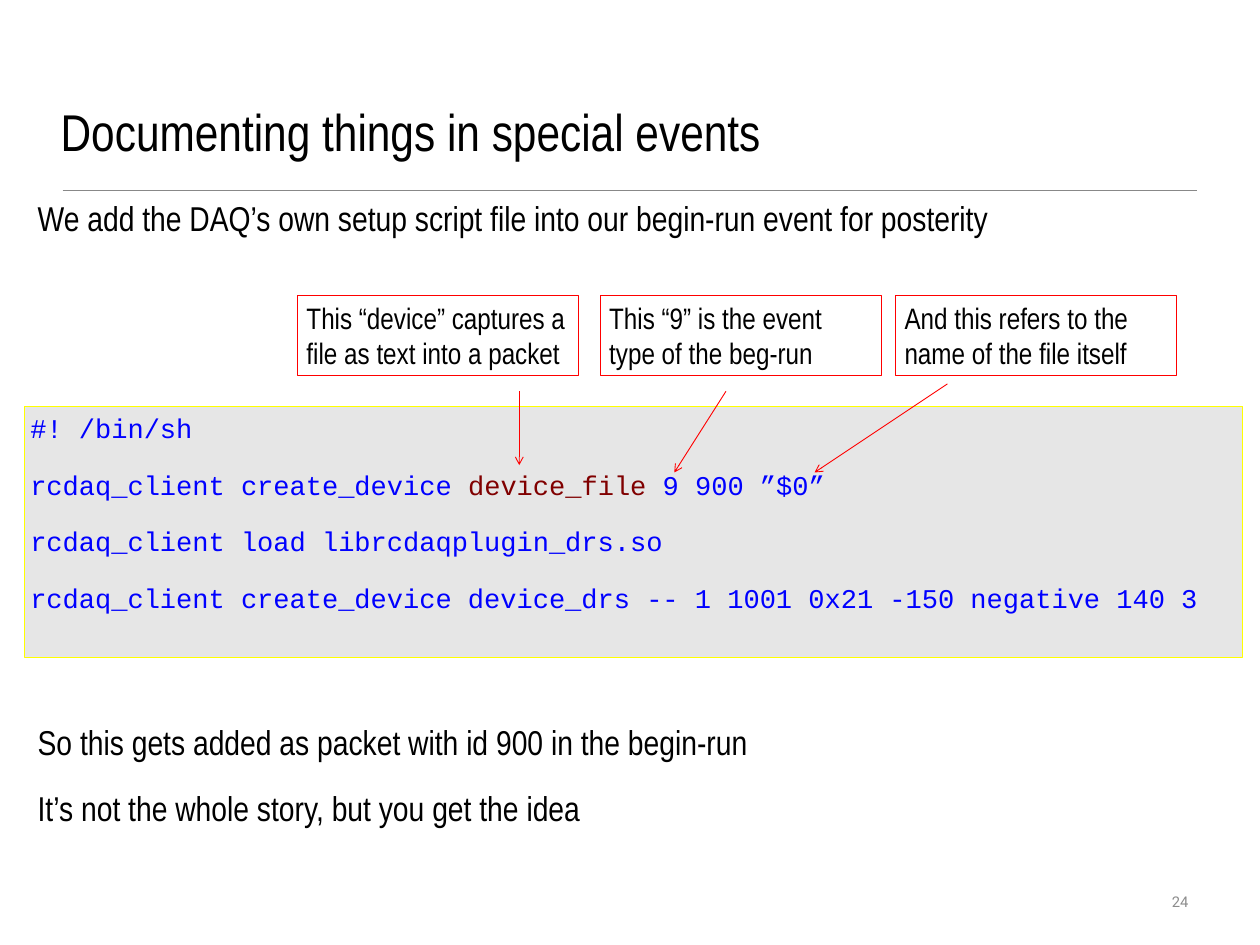
from dataclasses import dataclass

from lxml import etree
from pptx import Presentation
from pptx.dml.color import RGBColor
from pptx.enum.shapes import MSO_CONNECTOR, MSO_SHAPE
from pptx.enum.text import MSO_ANCHOR, MSO_AUTO_SIZE, PP_ALIGN
from pptx.oxml.ns import qn
from pptx.util import Pt

STRAIGHT = MSO_CONNECTOR.STRAIGHT
RECTANGLE = MSO_SHAPE.RECTANGLE
TOP, MIDDLE, BOTTOM = MSO_ANCHOR.TOP, MSO_ANCHOR.MIDDLE, MSO_ANCHOR.BOTTOM
LEFT, RIGHT = PP_ALIGN.LEFT, PP_ALIGN.RIGHT
FIT_SHAPE, NO_FIT = MSO_AUTO_SIZE.SHAPE_TO_FIT_TEXT, MSO_AUTO_SIZE.NONE


@dataclass(frozen=True)
class Theme:
    ink: str = "000000"
    code: str = "0000FF"
    device: str = "800000"
    code_fill: str = "E6E6E6"
    code_border: str = "FFFF00"
    callout: str = "FF0000"
    rule: str = "888888"
    number: str = "8C8C8C"
    body_font: str = "Arial Narrow"
    code_font: str = "Courier New"
    number_font: str = "Roboto"
    title_size: float = 42
    body_size: float = 28
    callout_size: float = 24
    code_size: float = 22
    number_size: float = 12


THEME = Theme()
TIGHT = (4.3, 4.3)
LOOSE = (7.2, 3.6)

CODE_LINES = [
    "#! /bin/sh",
    ["rcdaq_client create_device ", ("device_file", THEME.device), " 9 900 ”$0”"],
    "rcdaq_client load librcdaqplugin_drs.so",
    "rcdaq_client create_device device_drs -- 1 1001 0x21 -150 negative 140 3",
]

# Callout text, box left, arrow start, arrow end
CALLOUTS = [
    ("This “device” captures a file as text into a packet", 242, (422, 318), (422, 378)),
    ("This “9” is the event type of the beg-run", 488, (590, 318), (548, 384)),
    ("And this refers to the name of the file itself", 728, (770, 312), (662, 384)),
]


def rgb(value):
    return RGBColor.from_string(value)


def write(shape, lines, *, size, font=THEME.body_font, color=THEME.ink, align=LEFT,
          anchor=TOP, inset=TIGHT, gap=0, hanging=False, fit=NO_FIT):
    """Each line is a string or a list of strings and (string, colour) pairs."""
    frame = shape.text_frame
    frame.word_wrap = True
    frame.auto_size = fit
    frame.vertical_anchor = anchor
    frame.margin_left = frame.margin_right = Pt(inset[0])
    frame.margin_top = frame.margin_bottom = Pt(inset[1])
    for index, line in enumerate(lines):
        paragraph = frame.add_paragraph() if index else frame.paragraphs[0]
        paragraph.alignment = align
        if index:
            paragraph.space_before = Pt(gap)
        if hanging:
            properties = paragraph._p.get_or_add_pPr()
            properties.set("marL", str(Pt(27)))
            properties.set("indent", str(-Pt(26.7)))
        for part in [line] if isinstance(line, str) else line:
            text, tint = (part, color) if isinstance(part, str) else part
            run = paragraph.add_run()
            run.text = text
            run.font.name = font
            run.font.size = Pt(size)
            run.font.color.rgb = rgb(tint)


def add_text(slide, box, lines, **text_format):
    write(slide.shapes.add_textbox(*map(Pt, box)), lines, **text_format)


def add_panel(slide, box, lines, *, border, fill=None, **text_format):
    panel = slide.shapes.add_shape(RECTANGLE, *map(Pt, box))
    panel.shadow.inherit = False
    if fill:
        panel.fill.solid()
        panel.fill.fore_color.rgb = rgb(fill)
    else:
        panel.fill.background()
    panel.line.color.rgb = rgb(border)
    panel.line.width = Pt(0.75)
    write(panel, lines, **text_format)


def add_line(slide, start, end, *, color, width=0.75, arrow=False):
    line = slide.shapes.add_connector(STRAIGHT, *map(Pt, start + end))
    line.line.color.rgb = rgb(color)
    line.line.width = Pt(width)
    if arrow:
        etree.SubElement(line.line._get_or_add_ln(), qn("a:tailEnd"), type="arrow")
    etree.SubElement(line._element.spPr, qn("a:effectLst"))


def main():
    deck = Presentation()
    deck.slide_width, deck.slide_height = Pt(1024), Pt(768)
    slide = deck.slides.add_slide(deck.slide_layouts[6])
    body = dict(size=THEME.body_size, gap=19.6, hanging=True)

    # Title and rule
    add_line(slide, (51, 155), (973, 155), color=THEME.rule, width=1)
    add_text(slide, (45, 26, 934, 110), ["Documenting things in special events"],
             size=THEME.title_size, anchor=BOTTOM)

    # Introduction
    add_text(slide, (26, 156, 963, 108),
             ["We add the DAQ’s own setup script file into our begin-run event for posterity"],
             **body)

    # Setup script
    add_panel(slide, (20, 330, 990, 204), CODE_LINES, border=THEME.code_border,
              fill=THEME.code_fill, font=THEME.code_font, size=THEME.code_size,
              color=THEME.code, gap=19.6, hanging=True)

    # Conclusion
    add_text(slide, (26, 582, 963, 108),
             ["So this gets added as packet with id 900 in the begin-run",
              "It’s not the whole story, but you get the idea"], **body)

    # Callouts with arrows into the script
    for text, left, start, end in CALLOUTS:
        add_panel(slide, (left, 240, 228, 65.5), [text], border=THEME.callout,
                  size=THEME.callout_size, inset=LOOSE, fit=FIT_SHAPE)
        add_line(slide, start, end, color=THEME.callout, arrow=True)

    # Slide number
    add_text(slide, (734, 712, 239, 41), ["24"], size=THEME.number_size,
             font=THEME.number_font, color=THEME.number, align=RIGHT,
             anchor=MIDDLE, inset=LOOSE)

    deck.save("out.pptx")


if __name__ == "__main__":
    main()
